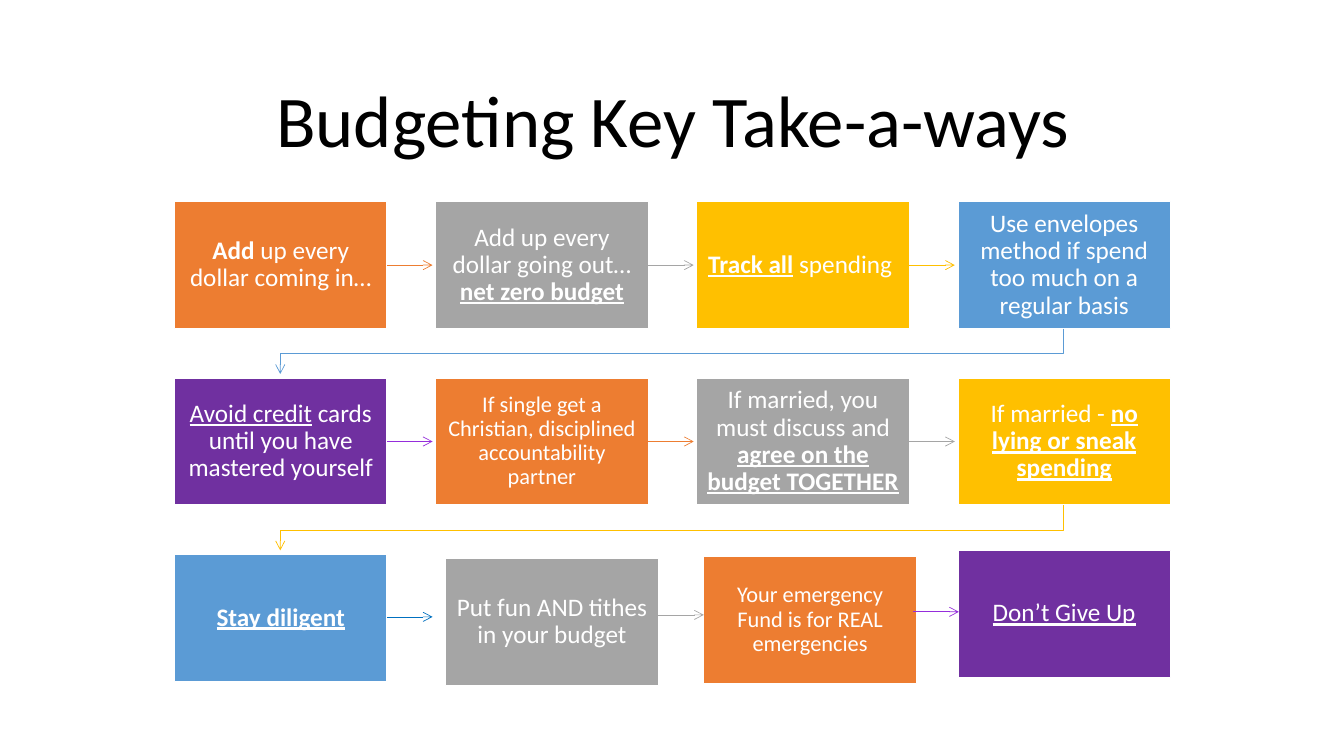
from lxml import etree
from pptx import Presentation
from pptx.dml.color import RGBColor
from pptx.enum.shapes import MSO_CONNECTOR as Link, MSO_SHAPE as Shape
from pptx.enum.text import MSO_ANCHOR as Anchor, PP_ALIGN as Align
from pptx.oxml.ns import qn
from pptx.util import Pt

PX = 9144
FONT = "Calibri"
HEX = {
    "orange": "ED7D31", "gray": "A5A5A5", "gold": "FFC000", "blue": "5B9BD5",
    "purple": "7030A0", "violet": "952DDB", "navy": "0070C0",
    "white": "FFFFFF", "black": "000000",
}
COLS, WIDE, HIGH, STEP, DROP = 4, 211, 126, 259, 175
GRID = (173, 200)

STEPS = [
    ("orange", 18, [("Add", "b"), (" up every dollar coming in…", "")]),
    ("gray", 18, [("Add up every dollar going out…", ""), ("net zero budget", "bu")]),
    ("gold", 18, [("Track all", "bu"), (" spending ", "")]),
    ("blue", 18, [("Use envelopes method if spend too much on a regular basis", "")]),
    ("purple", 18, [("Avoid credit", "u"), (" cards until you have mastered yourself", "")]),
    ("orange", 16, [("If single get a Christian, disciplined accountability partner", "")]),
    ("gray", 18, [("If married, you must discuss and ", ""),
                  ("agree on the budget TOGETHER", "bu")]),
    ("gold", 18, [("If married - ", ""), ("no lying or sneak spending", "bu")]),
    ("blue", 18, [("Stay diligent", "bu")]),
    ("gray", 18, [("Put fun AND tithes in your budget", "")]),
    ("orange", 16, [("Your emergency Fund is for REAL emergencies", "")]),
    ("purple", 18, [("Don’t Give Up", "u")]),
]
LINKS = ["orange", "gray", "gold", "blue", "violet", "orange", "gray", "gold",
         "navy", "gray", "violet"]
BOX_SHIFT = {9: (10, 4), 10: (7, 2), 11: (0, -4)}
LINK_SHIFT = {8: (0, -1), 9: (10, -3), 10: (4, -6)}


def rgb(name):
    return RGBColor.from_string(HEX[name])


def style(run, size, color, marks=""):
    font = run.font
    font.name, font.size = FONT, Pt(size)
    font.color.rgb = rgb(color)
    font.bold, font.underline = "b" in marks, "u" in marks


def add_title(slide, left, top, width, height):
    title = slide.shapes.title
    title.left, title.top = left * PX, top * PX
    title.width, title.height = width * PX, height * PX
    frame = title.text_frame
    frame.text = "Budgeting Key Take-a-ways"
    frame.vertical_anchor = Anchor.MIDDLE
    para = frame.paragraphs[0]
    para.alignment, para.line_spacing = Align.CENTER, 0.9
    style(para.runs[0], 52, "black")


def add_step(slide, left, top, color, size, parts):
    box = slide.shapes.add_shape(
        Shape.RECTANGLE, left * PX, top * PX, WIDE * PX, HIGH * PX)
    box.shadow.inherit = False
    box.fill.solid()
    box.fill.fore_color.rgb = rgb(color)
    box.line.color.rgb = rgb("white")
    box.line.width = Pt(1)
    frame = box.text_frame
    frame.word_wrap = True
    frame.vertical_anchor = Anchor.MIDDLE
    frame.margin_left = frame.margin_right = 10 * PX
    frame.margin_top = frame.margin_bottom = 11 * PX
    para = frame.paragraphs[0]
    para.alignment, para.line_spacing = Align.CENTER, 0.9
    for text, marks in parts:
        run = para.add_run()
        run.text = text
        style(run, size, "white", marks)


def add_head(line, color):
    line.color.rgb = rgb(color)
    line.width = Pt(0.5)
    etree.SubElement(line._get_or_add_ln(), qn("a:tailEnd"), type="arrow")


def add_arrow(slide, left, mid, color):
    arrow = slide.shapes.add_connector(
        Link.STRAIGHT, left * PX, mid * PX, (left + 45) * PX, mid * PX)
    add_head(arrow.line, color)
    etree.SubElement(arrow._element.spPr, qn("a:effectLst"))


def add_turn(slide, left, right, top, color):
    path = slide.shapes.build_freeform(right, top, scale=PX)
    path.add_line_segments(
        [(right, top + 25), (left, top + 25), (left, top + 45)], close=False)
    turn = path.convert_to_shape()
    turn.shadow.inherit = False
    turn.fill.background()
    add_head(turn.line, color)


def add_flow(slide, left, top):
    def place(spot, shifts):
        row, col = divmod(spot, COLS)
        dx, dy = shifts.get(spot, (0, 0))
        return left + col * STEP + dx, top + row * DROP + dy

    for spot, step in enumerate(STEPS):
        add_step(slide, *place(spot, BOX_SHIFT), *step)
    for spot, color in enumerate(LINKS):
        x, y = place(spot, LINK_SHIFT)
        if spot % COLS == COLS - 1:
            half = WIDE // 2
            add_turn(slide, left + half, x + half, y + HIGH, color)
        else:
            add_arrow(slide, x + WIDE, y + HIGH // 2, color)


def main():
    deck = Presentation()
    deck.slide_width, deck.slide_height = 1333 * PX, 750 * PX
    slide = deck.slides.add_slide(deck.slide_layouts[5])
    add_title(slide, 92, 61, 1150, 124)
    add_flow(slide, *GRID)
    deck.save("out.pptx")


if __name__ == "__main__":
    main()
